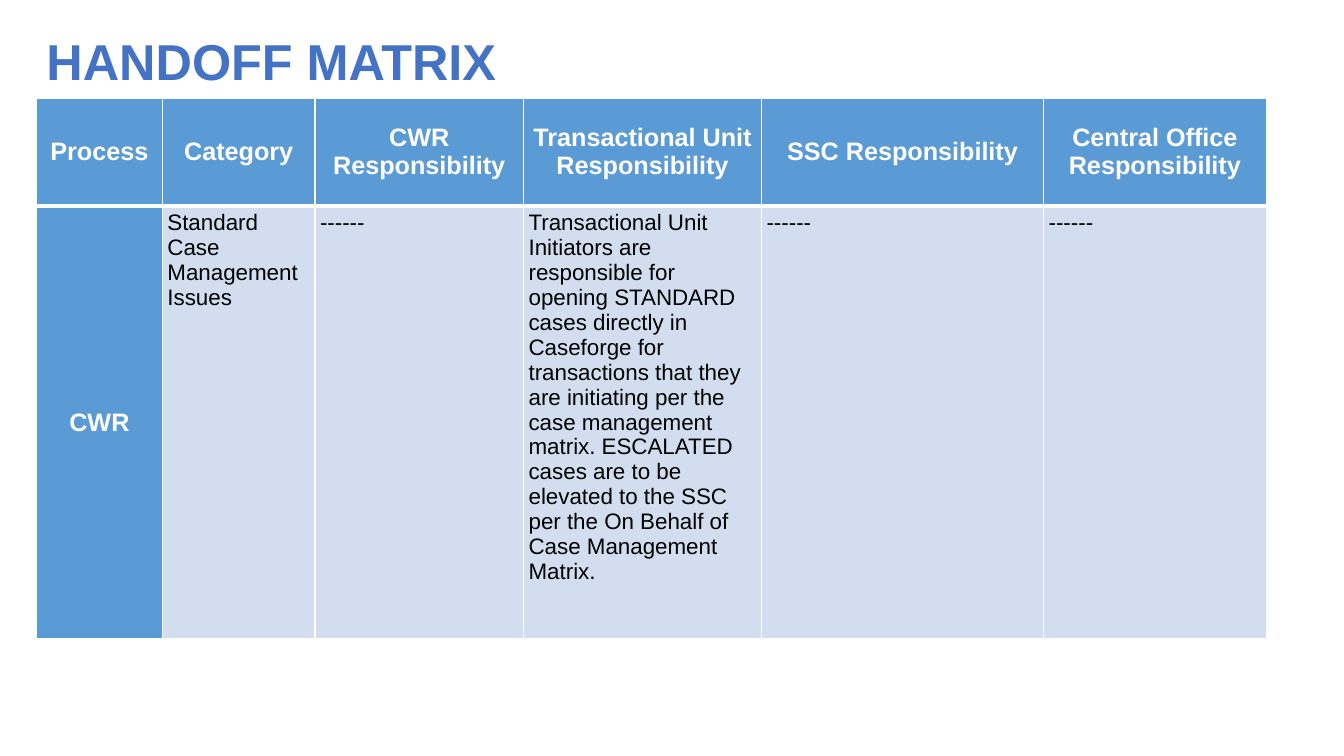
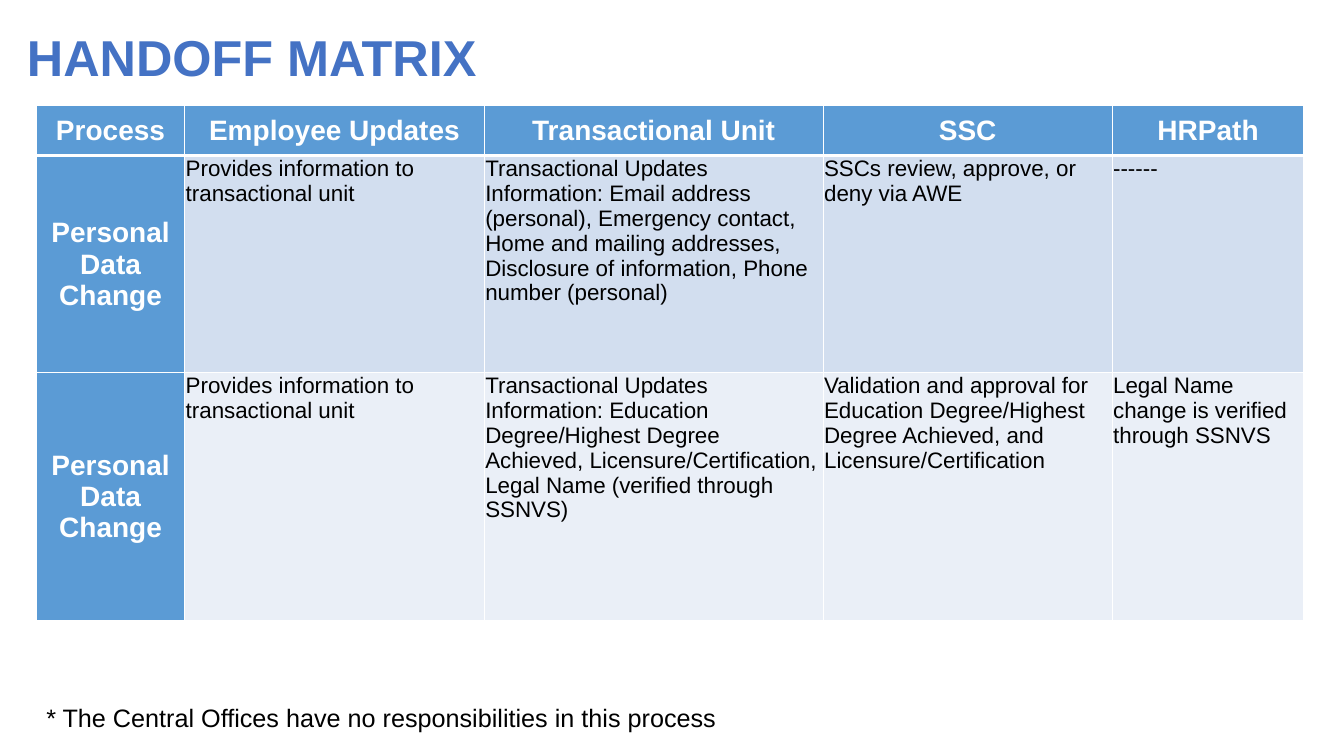
from collections import namedtuple

from lxml.etree import SubElement
from pptx import Presentation
from pptx.dml.color import RGBColor
from pptx.enum.text import MSO_ANCHOR as Anchor, MSO_AUTO_SIZE as AutoSize, PP_ALIGN as Align
from pptx.oxml.ns import qn
from pptx.util import Pt

WHITE = RGBColor(0xFF, 0xFF, 0xFF)
BLACK = RGBColor(0x00, 0x00, 0x00)
TITLE_BLUE = RGBColor(0x44, 0x72, 0xC4)
HEADER_BLUE = RGBColor(0x5B, 0x9B, 0xD5)
BAND_COLORS = (RGBColor(0xD2, 0xDE, 0xEF), RGBColor(0xEA, 0xEF, 0xF7))

FONT = "Arial"
TITLE_FORMAT = {"name": FONT, "size": Pt(36), "bold": True}
BODY_FORMAT = {"name": FONT, "size": Pt(16), "bold": False}
NOTE_FORMAT = {"name": FONT, "size": Pt(18), "bold": False}
TITLE_ONLY = 5
LEFT = 26
NONE_MARK = "------"

Box = namedtuple("Box", "left top width height")
Matrix = namedtuple("Matrix", "columns heights label_size margins rows")

CASE_MATRIX = Matrix(
    columns=(90, 109, 149, 170, 201.5, 159),
    heights=(77, 309.5),
    label_size=18,
    margins=(3.6, 3.6, 3.6, 3.6),
    rows=(
        ("Process", "Category", "CWR Responsibility", "Transactional Unit Responsibility",
         "SSC Responsibility", "Central Office Responsibility"),
        ("CWR", "Standard Case Management Issues", NONE_MARK,
         "Transactional Unit Initiators are responsible for opening STANDARD cases directly in "
         "Caseforge for transactions that they are initiating per the case management matrix. "
         "ESCALATED cases are to be elevated to the SSC per the On Behalf of Case Management "
         "Matrix.",
         NONE_MARK, NONE_MARK),
    ),
)

PERSONAL_DATA_MATRIX = Matrix(
    columns=(106, 214, 242, 206.5, 137),
    heights=(36, 155, 177),
    label_size=20,
    margins=(0.7, 0.7, 0.7, 0),
    rows=(
        ("Process", "Employee Updates", "Transactional Unit", "SSC", "HRPath"),
        ("Personal Data Change", "Provides information to\ntransactional unit",
         "Transactional Updates Information: Email address (personal), Emergency contact, Home "
         "and mailing addresses, Disclosure of information, Phone number (personal)",
         "SSCs review, approve, or deny via AWE", NONE_MARK),
        ("Personal Data Change", "Provides information to\ntransactional unit",
         "Transactional Updates Information: Education Degree/Highest Degree Achieved, "
         "Licensure/Certification, Legal Name (verified through SSNVS)",
         "Validation and approval for Education Degree/Highest Degree Achieved, and "
         "Licensure/Certification",
         "Legal Name change is verified through SSNVS"),
    ),
)


def set_all(target, values):
    for name, value in values.items():
        setattr(target, name, value)


def format_text(text_frame, values, color, alignment=Align.LEFT):
    for paragraph in text_frame.paragraphs:
        paragraph.alignment = alignment
        set_all(paragraph.font, values)
        paragraph.font.color.rgb = color


def place(shape, box):
    set_all(shape, {name: Pt(value) for name, value in box._asdict().items()})


def add_title(slide, box):
    title = slide.shapes.title
    place(title, box)
    title.text_frame.text = "HANDOFF MATRIX"
    set_all(title.text_frame, {"auto_size": AutoSize.NONE, "vertical_anchor": Anchor.MIDDLE})
    format_text(title.text_frame, TITLE_FORMAT, TITLE_BLUE)


def add_borders(cell, bottom_width):
    properties = cell._tc.get_or_add_tcPr()
    for side, width in (("L", 1), ("R", 1), ("T", 1), ("B", bottom_width)):
        line = SubElement(properties, qn(f"a:ln{side}"), w=str(Pt(width)))
        fill = SubElement(line, qn("a:solidFill"))
        SubElement(fill, qn("a:srgbClr"), val=str(WHITE))


def fill_cell(cell, text, matrix, row, column):
    is_label = row == 0 or column == 0
    cell.text = text
    add_borders(cell, 3 if row == 0 else 1)
    cell.fill.solid()
    cell.fill.fore_color.rgb = HEADER_BLUE if is_label else BAND_COLORS[(row - 1) % 2]
    sides = ("margin_left", "margin_right", "margin_top", "margin_bottom")
    set_all(cell, {side: Pt(margin) for side, margin in zip(sides, matrix.margins)})
    if is_label:
        cell.vertical_anchor = Anchor.MIDDLE
        label_format = {"name": FONT, "size": Pt(matrix.label_size), "bold": True}
        format_text(cell.text_frame, label_format, WHITE, Align.CENTER)
    else:
        cell.vertical_anchor = Anchor.TOP
        format_text(cell.text_frame, BODY_FORMAT, BLACK)


def add_matrix(slide, left, top, matrix):
    box = Box(left, top, sum(matrix.columns), sum(matrix.heights))
    frame = slide.shapes.add_table(len(matrix.heights), len(matrix.columns), *map(Pt, box))
    table = frame.table
    set_all(table, {"first_row": True, "first_col": True, "horz_banding": False})
    for column, width in zip(table.columns, matrix.columns):
        column.width = Pt(width)
    for row, height in zip(table.rows, matrix.heights):
        row.height = Pt(height)
    for row, texts in enumerate(matrix.rows):
        for column, text in enumerate(texts):
            fill_cell(table.cell(row, column), text, matrix, row, column)


def add_footnote(slide, box, text):
    note = slide.shapes.add_textbox(*map(Pt, box))
    note.text_frame.text = text
    set_all(note.text_frame, {"word_wrap": False, "auto_size": AutoSize.SHAPE_TO_FIT_TEXT})
    format_text(note.text_frame, NOTE_FORMAT, BLACK)


def add_matrix_slide(presentation, title_box, matrix_top, matrix):
    slide = presentation.slides.add_slide(presentation.slide_layouts[TITLE_ONLY])
    add_title(slide, title_box)
    add_matrix(slide, LEFT, matrix_top, matrix)
    return slide


def main():
    presentation = Presentation()
    set_all(presentation, {"slide_width": Pt(960), "slide_height": Pt(540)})
    add_matrix_slide(presentation, Box(LEFT, 16, 838, 54), 70, CASE_MATRIX)
    slide = add_matrix_slide(presentation, Box(12, 13, 838, 54), 75, PERSONAL_DATA_MATRIX)
    add_footnote(slide, Box(LEFT, 498, 515, 29),
                 "* The Central Offices have no responsibilities in this process")
    presentation.save("out.pptx")


if __name__ == "__main__":
    main()
